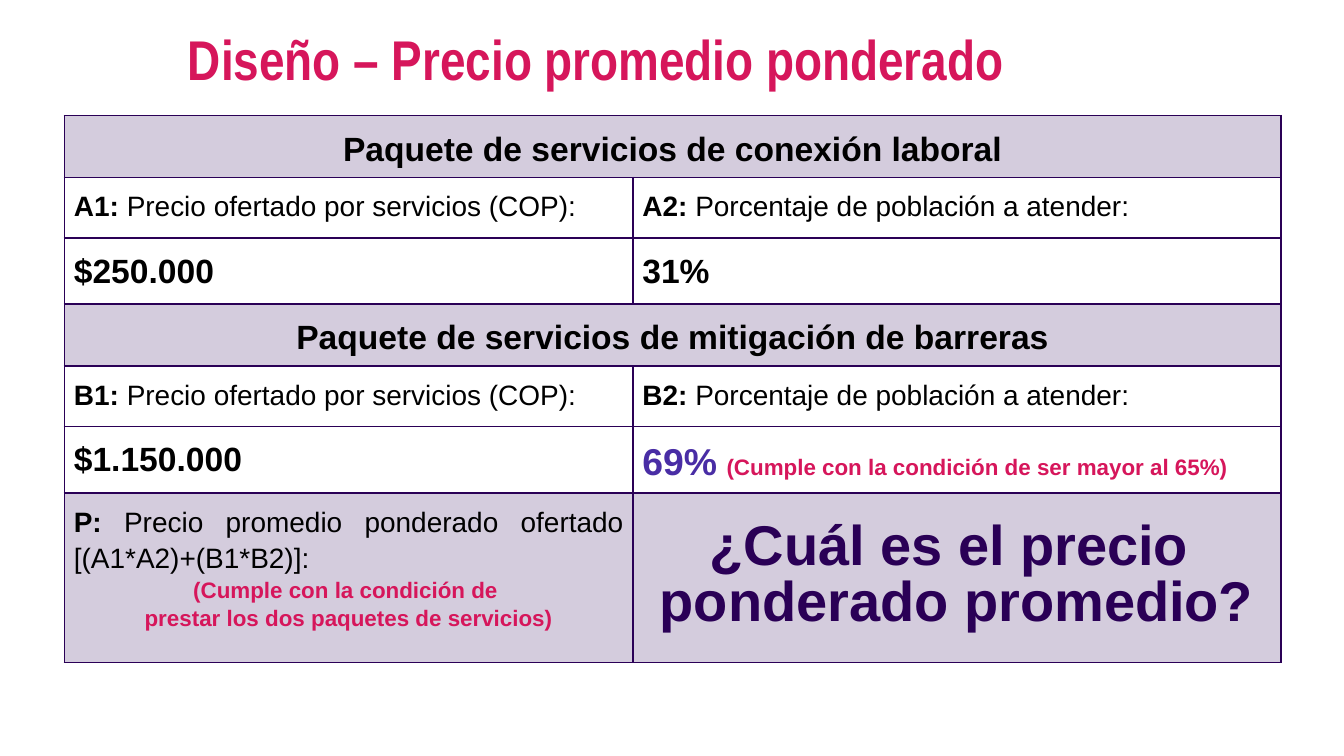
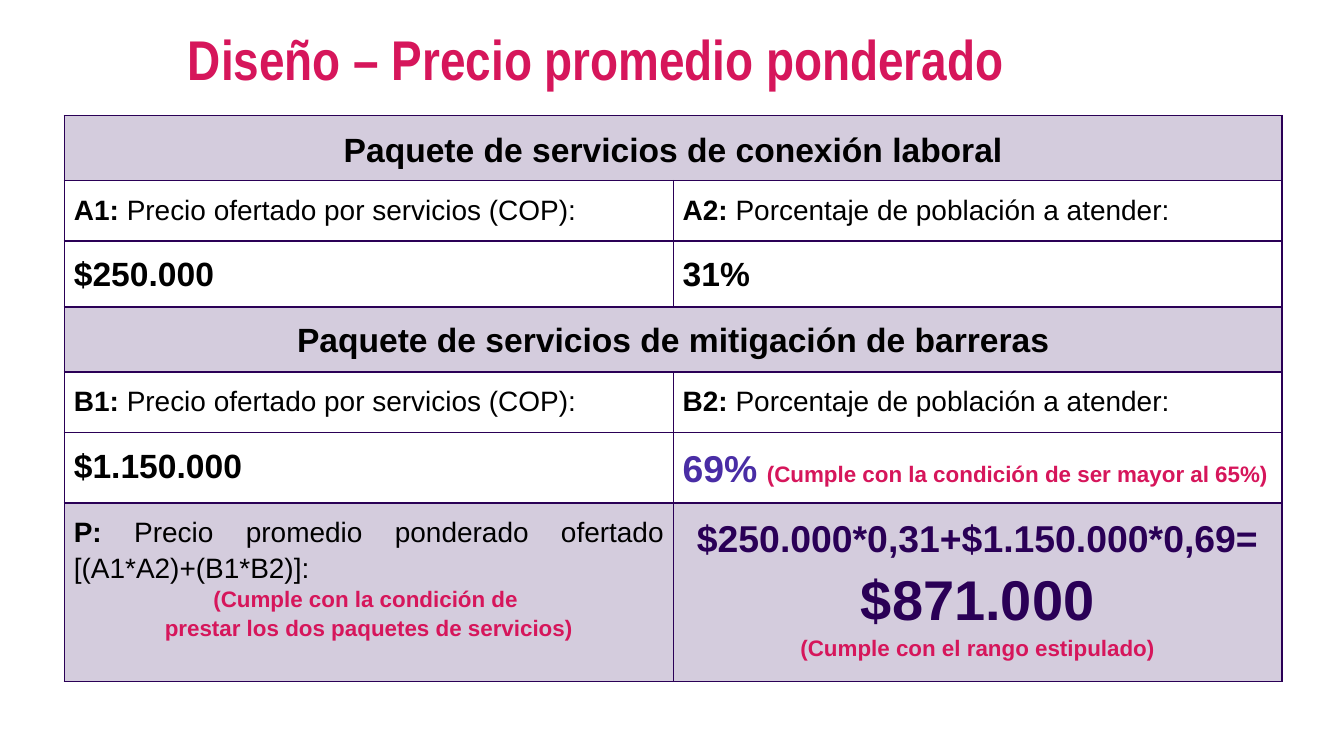
"""Builds two slides that work out a weighted average price in a table."""
from lxml import etree
from pptx import Presentation
from pptx.dml.color import RGBColor
from pptx.enum.text import MSO_ANCHOR, MSO_AUTO_SIZE, PP_ALIGN
from pptx.oxml.ns import qn
from pptx.util import Inches, Pt

LEFT, CENTER, JUSTIFY = PP_ALIGN.LEFT, PP_ALIGN.CENTER, PP_ALIGN.JUSTIFY
TOP, MIDDLE = MSO_ANCHOR.TOP, MSO_ANCHOR.MIDDLE
GROW = MSO_AUTO_SIZE.SHAPE_TO_FIT_TEXT

COLORS = {"pink": "D6165B", "purple": "2A0056", "violet": "492DA5", "black": "000000"}
ROW_HEIGHTS = [0.45, 0.45, 0.49, 0.45, 0.45, 0.49, 1.26]
HEADING_ROWS = (0, 3)
TOTAL_ROW = 6


def add_text(para, text, size=18, color="black", bold=True, font="Arial"):
    span = para.add_run()
    span.text = text
    span.font.size = Pt(size)
    span.font.bold = bold
    span.font.name = font
    span.font.color.rgb = RGBColor.from_string(COLORS[color])


def style_cell(cell, shaded):
    cell.margin_left = cell.margin_right = cell.margin_top = cell.margin_bottom = Inches(0.07)
    properties = cell._tc.get_or_add_tcPr()
    for side in ("a:lnL", "a:lnR", "a:lnT", "a:lnB"):
        line = etree.SubElement(properties, qn(side), w=str(Pt(1)))
        solid = etree.SubElement(line, qn("a:solidFill"))
        etree.SubElement(solid, qn("a:srgbClr"), val=COLORS["purple"])
    if shaded:
        cell.fill.solid()
        cell.fill.fore_color.rgb = RGBColor.from_string(COLORS["purple"])
        tint = properties.find(qn("a:solidFill")).find(qn("a:srgbClr"))
        etree.SubElement(tint, qn("a:alpha"), val="20000")
    else:
        cell.fill.background()


value = {"size": 18}
label = {"size": 15}
plain = {"size": 15, "bold": False}
note = {"size": 12, "color": "pink"}
price_label = (" Precio ofertado por servicios (COP): ", plain)
share_label = (" Porcentaje de población a atender:", plain)

shared_rows = [
    [[[("Paquete de servicios de conexión laboral", value)]]],
    [[[("A1:", label), price_label]], [[("A2:", label), share_label]]],
    [[[("$250.000", value)]], [[("31%", value)]]],
    [[[("Paquete de servicios de mitigación de barreras", value)]]],
    [[[("B1:", label), price_label]], [[("B2:", label), share_label]]],
    [
        [[("$1.150.000", value)]],
        [[
            ("69%", {"size": 20, "color": "violet"}),
            (" ", value),
            ("(Cumple con la condición de ser mayor al 65%)", note),
        ]],
    ],
]
formula = [
    [("P: ", label), ("Precio promedio ponderado ofertado [(A1*A2)+(B1*B2)]:", plain)],
    [("(Cumple con la condición de ", note)],
    [("prestar los dos paquetes de servicios)", note)],
]
large = {"size": 30, "color": "purple"}
question = [[("¿Cuál es el precio ", large)], [("ponderado promedio?", large)]]
answer = [
    [("$250.000*0,31+$1.150.000*0,69=", {"size": 20, "color": "purple"})],
    [("$871.000", large)],
    [("(Cumple con el rango estipulado)", note)],
]
pages = [
    {"widths": (4.23, 4.82), "height": 4.06, "result": question, "anchor": MIDDLE, "spacing": Pt(30)},
    {"widths": (4.53, 4.53), "height": 4.1, "result": answer, "anchor": TOP, "spacing": 1.15},
]

deck = Presentation()
deck.slide_width = Inches(10)
deck.slide_height = deck.slide_width * 9 // 16

for content in pages:
    page = deck.slides.add_slide(deck.slide_layouts[6])
    frame = page.shapes.add_table(
        len(ROW_HEIGHTS), 2, Inches(0.48), Inches(0.86),
        Inches(sum(content["widths"])), Inches(content["height"]),
    )
    table = frame.table
    table.first_row = table.horz_banding = False
    for column, width in zip(table.columns, content["widths"]):
        column.width = Inches(width)
    for row, height in zip(table.rows, ROW_HEIGHTS):
        row.height = Inches(height)
    frame.height = Inches(content["height"])

    rows = shared_rows + [[formula, content["result"]]]
    for row_index, row_cells in enumerate(rows):
        heading = row_index in HEADING_ROWS
        for cell in table.rows[row_index].cells:
            style_cell(cell, heading or row_index == TOTAL_ROW)
        if heading:
            table.cell(row_index, 0).merge(table.cell(row_index, 1))
        for column_index, paragraphs in enumerate(row_cells):
            cell = table.cell(row_index, column_index)
            is_result = (row_index, column_index) == (TOTAL_ROW, 1)
            cell.vertical_anchor = content["anchor"] if is_result else MIDDLE if row_index == 0 else TOP
            for para_index, spans in enumerate(paragraphs):
                body = cell.text_frame
                para = body.add_paragraph() if para_index else body.paragraphs[0]
                para.alignment = CENTER if heading or is_result or para_index else JUSTIFY
                para.line_spacing = content["spacing"] if is_result else 1.15
                for text, style in spans:
                    add_text(para, text, **style)

    title = page.shapes.add_textbox(Inches(1.3), Inches(0.13), Inches(7.48), Inches(0.61))
    title.text_frame.word_wrap = True
    title.text_frame.auto_size = GROW
    para = title.text_frame.paragraphs[0]
    para.alignment = LEFT
    add_text(para, "Diseño – Precio promedio ponderado", size=30, color="pink", font="Arial Narrow")

deck.save("out.pptx")
